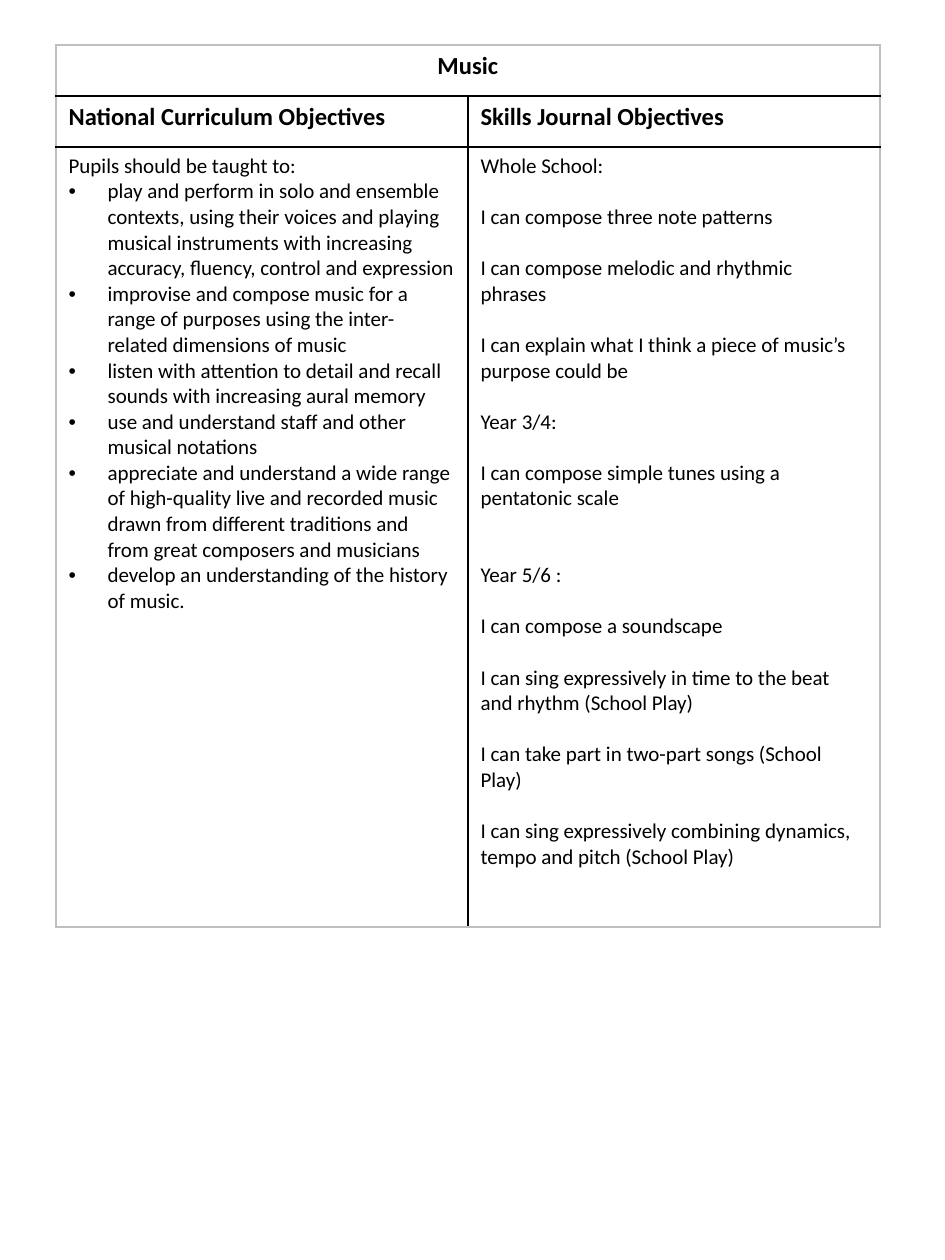
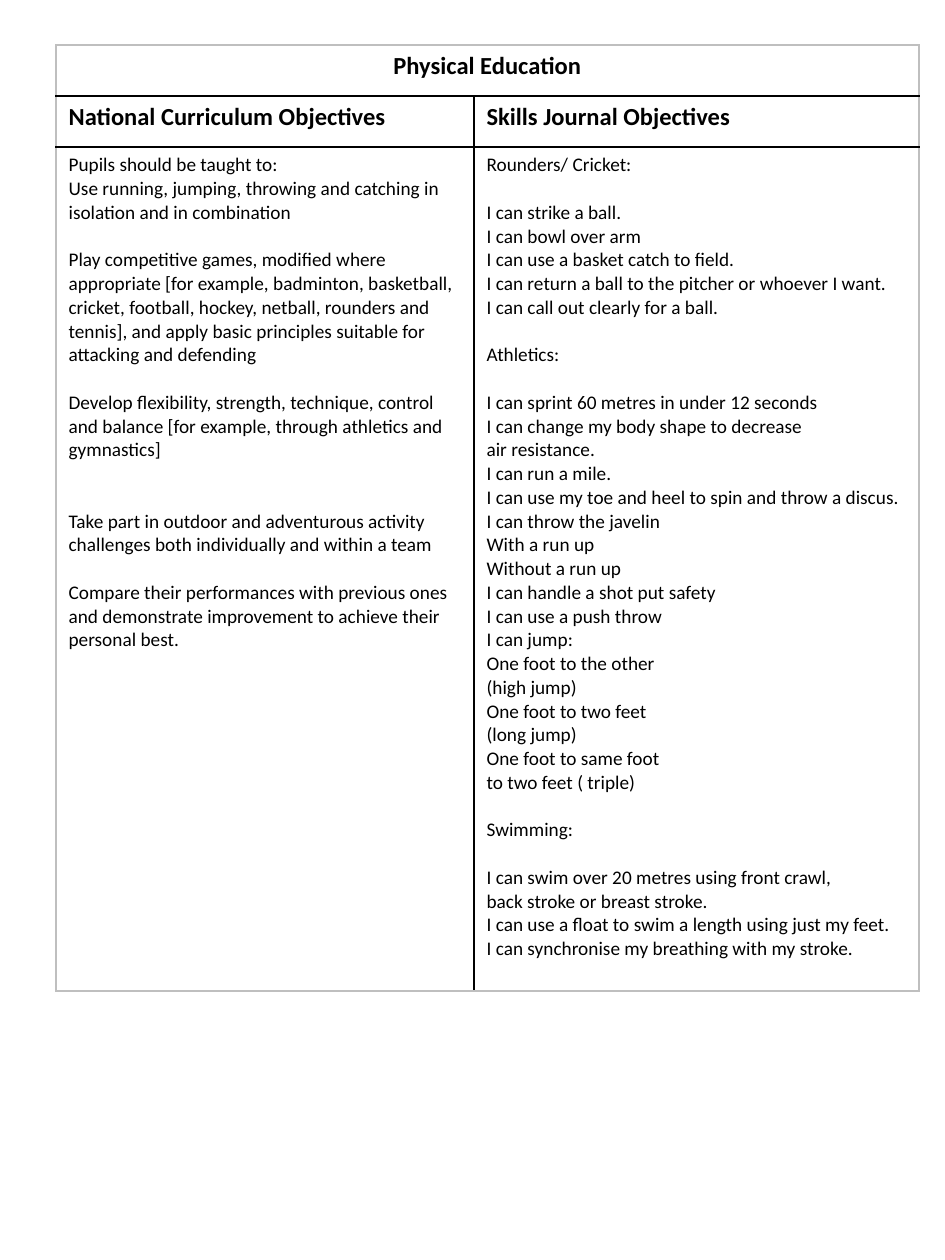
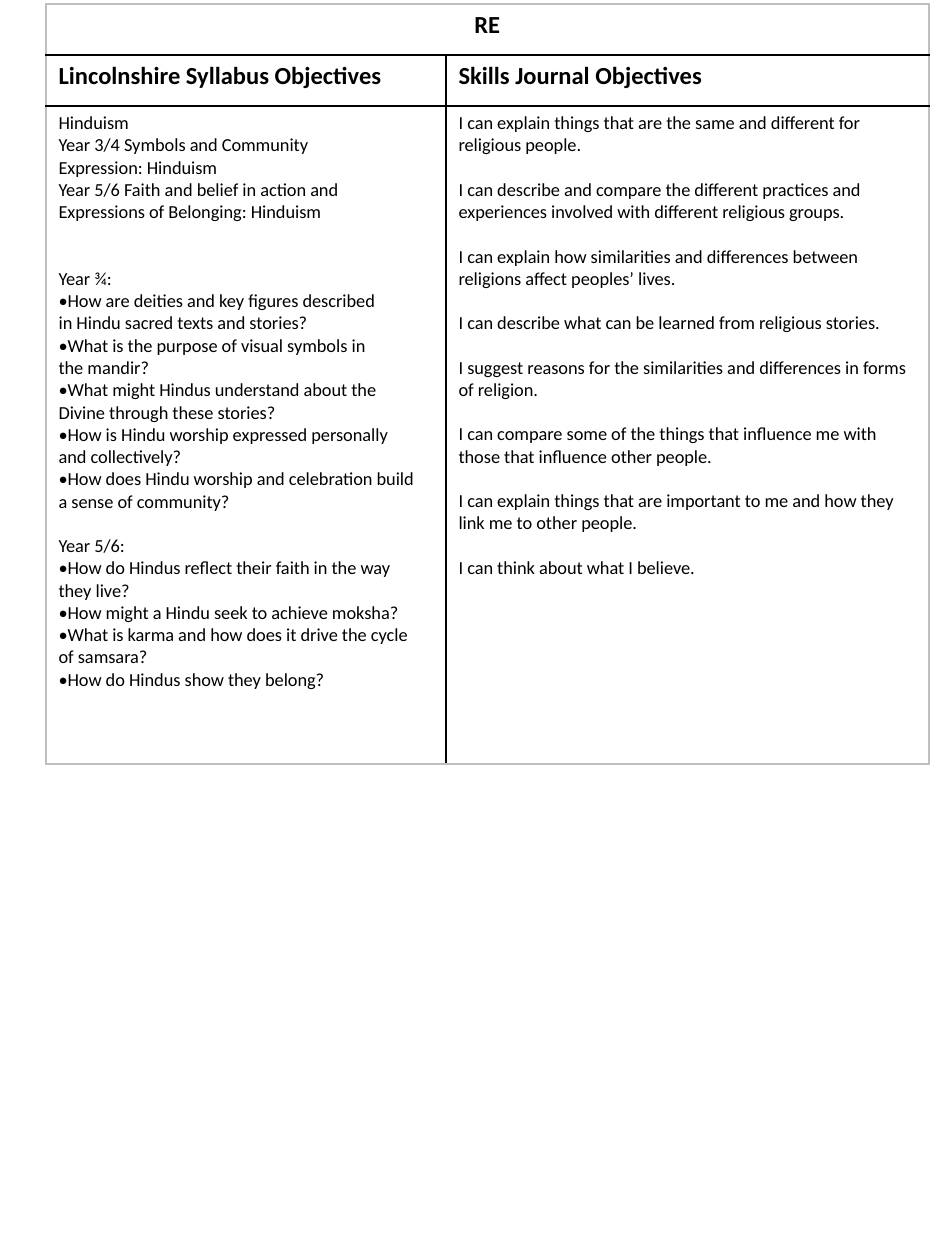
from dataclasses import dataclass
from typing import NamedTuple

from lxml import etree
from pptx import Presentation
from pptx.dml.color import RGBColor
from pptx.enum.text import PP_ALIGN
from pptx.oxml.ns import qn
from pptx.util import Emu, Pt

CENTER, LEFT = PP_ALIGN.CENTER, PP_ALIGN.LEFT

# Shared look
PX = 914400 / 126
PAGE_WIDTH, PAGE_HEIGHT = 945, 1260
HEADING_ROWS = (51, 51)
BULLET_INDENT = 39
RIGHT_MARGIN = 13
FONT = "Calibri"
HEADING_SIZE = 14
BORDER = Pt(1)
COLORS = {"text": "000000", "rule": "000000", "frame": "BFBFBF"}


class Entry(NamedTuple):
    text: str  # "~" stands for a non-breaking space
    gap: int = 0  # free lines above
    bulleted: bool = False


@dataclass(frozen=True)
class Subject:
    title: str
    source: str
    left: int
    top: int
    columns: tuple[int, int]
    body_height: int
    size: float
    free_line: float  # height of a free line in points
    objectives: list[Entry]
    skills: list[Entry]


def px(length: int) -> Emu:
    return Emu(round(length * PX))


def spaced(*texts: str) -> list[Entry]:
    """Entries with one free line between them."""
    return [Entry(text, min(index, 1)) for index, text in enumerate(texts)]


def lines(*texts: str, gap: int = 0) -> list[Entry]:
    """Entries set close together, with a gap above the first."""
    return [Entry(text, 0 if index else gap) for index, text in enumerate(texts)]


def bullets(*texts: str) -> list[Entry]:
    return [Entry(text, bulleted=True) for text in texts]


def add_bullet(paragraph) -> None:
    properties = paragraph._p.get_or_add_pPr()
    properties.set("marL", str(px(BULLET_INDENT)))
    properties.set("indent", str(-px(BULLET_INDENT)))
    bullet_font = etree.Element(qn("a:buFont"), typeface="Arial")
    bullet = etree.Element(qn("a:buChar"), char="•")
    default_font = properties.find(qn("a:defRPr"))
    default_font.addprevious(bullet_font)
    default_font.addprevious(bullet)


def write(cell, entries: list[Entry], size: float, free_line: float = 0,
          bold: bool = False, align=LEFT) -> None:
    frame = cell.text_frame
    for index, entry in enumerate(entries):
        paragraph = frame.add_paragraph() if index else frame.paragraphs[0]
        paragraph.text = entry.text.replace("~", chr(160))
        paragraph.alignment = align
        paragraph.space_before = Pt(round(entry.gap * free_line, 2))
        font = paragraph.font
        font.name, font.size, font.bold = FONT, Pt(size), bold
        font.color.rgb = RGBColor.from_string(COLORS["text"])
        if entry.bulleted:
            add_bullet(paragraph)


def set_borders(cell, row: int, column: int) -> None:
    # The title row spans both columns, so both its ends lie on the frame
    outer_sides = {"lnL": column == 0 or row == 0, "lnR": column == 1 or row == 0,
                   "lnT": row == 0, "lnB": row == len(HEADING_ROWS)}
    properties = cell._tc.get_or_add_tcPr()
    for side, is_outer in outer_sides.items():
        line = etree.SubElement(properties, qn(f"a:{side}"), w=str(BORDER))
        fill = etree.SubElement(line, qn("a:solidFill"))
        color = COLORS["frame" if is_outer else "rule"]
        etree.SubElement(fill, qn("a:srgbClr"), val=color)


def add_subject(prs, subject: Subject) -> None:
    slide = prs.slides.add_slide(prs.slide_layouts[6])
    heights = (*HEADING_ROWS, subject.body_height)
    table = slide.shapes.add_table(
        len(heights), len(subject.columns), px(subject.left), px(subject.top),
        px(sum(subject.columns)), px(sum(heights))).table
    table.first_row = table.horz_banding = False
    for column, width in zip(table.columns, subject.columns):
        column.width = px(width)

    # Grid
    for row, height in enumerate(heights):
        table.rows[row].height = px(height)
        for column in range(len(subject.columns)):
            cell = table.cell(row, column)
            set_borders(cell, row, column)
            cell.fill.background()
            cell.margin_right = px(RIGHT_MARGIN)

    # Headings
    title = table.cell(0, 0)
    title.merge(table.cell(0, 1))
    write(title, [Entry(subject.title)], HEADING_SIZE, bold=True, align=CENTER)
    for column, name in enumerate((subject.source, "Skills Journal")):
        write(table.cell(1, column), [Entry(f"{name} Objectives")],
              HEADING_SIZE, bold=True)

    # Objectives
    for column, entries in enumerate((subject.objectives, subject.skills)):
        write(table.cell(2, column), entries, subject.size, subject.free_line)


MUSIC = Subject(
    "Music", "National Curriculum", 56, 45, (412, 412), 780, 12, 14.63,
    objectives=lines("Pupils should be taught to:") + bullets(
        "play and perform in solo and ensemble contexts, using their voices and "
        "playing musical instruments with increasing accuracy, fluency, control "
        "and expression",
        "improvise and compose music for a range of purposes using the "
        "inter-related dimensions of music",
        "listen with attention to detail and recall sounds with increasing aural "
        "memory",
        "use and understand staff and other musical notations",
        "appreciate and understand a wide range of high-quality live and recorded "
        "music drawn from different traditions and from great composers and "
        "musicians",
        "develop an understanding of the history of music."),
    skills=spaced(
        "Whole School:",
        "I can compose three note patterns",
        "I can compose melodic and rhythmic phrases~",
        "I can explain what I think a piece of music’s purpose could be",
        "Year 3/4:",
        "I can compose simple tunes using a pentatonic scale",
    ) + [Entry("Year 5/6 :", 2), Entry("I can compose a soundscape", 1)] + [
        Entry(f"{skill}~(School Play)", 1) for skill in (
            "I can sing expressively in time to the beat and rhythm",
            "I can take part in two-part songs",
            "I can sing expressively combining dynamics, tempo and pitch")],
)

PHYSICAL_EDUCATION = Subject(
    "Physical Education", "National Curriculum", 56, 45, (418, 445), 844, 11, 13.55,
    objectives=lines(
        "Pupils should be taught to:",
        "Use running, jumping, throwing and catching in isolation and in "
        "combination",
    ) + [
        Entry("Play competitive games, modified where appropriate [for example, "
              "badminton, basketball, cricket, football, hockey, netball, rounders "
              "and tennis], and apply basic principles suitable for attacking and "
              "defending", 1),
        Entry("Develop flexibility, strength, technique, control and balance [for "
              "example, through athletics and gymnastics]", 1),
        Entry("Take part in outdoor and adventurous activity challenges both "
              "individually and within a team", 2),
        Entry("Compare their performances with previous ones and demonstrate "
              "improvement to achieve their personal best.", 1),
    ],
    skills=lines("Rounders/ Cricket:") + lines(
        "I can strike a ball.",
        "I can bowl over arm",
        "I can use a basket catch to field.",
        "I can return a ball to the pitcher or whoever I want.",
        "I can call out clearly for a ball.", gap=1,
    ) + lines("Athletics:", gap=1) + lines(
        "I can sprint 60 metres in under 12 seconds",
        "I can change my body shape to decrease air~resistance.",
        "I can run a mile.",
        "I can use my toe and heel to spin and throw a discus.",
        "I can throw the javelin",
        "With a run up",
        "Without a run up",
        "I can handle a shot put safety",
        "I can use a push throw",
        "I can jump:",
        "One foot to the other",
        "(high jump)",
        "One foot to two feet",
        "(long jump)",
        "One foot to same foot",
        "to two feet ( triple)", gap=1,
    ) + lines("Swimming:", gap=1) + lines(
        "I can swim over 20 metres using front crawl, back~stroke or~breast stroke.",
        "I can use a float to swim a length using just my feet.",
        "I can synchronise my breathing with my stroke.", gap=1),
)

RELIGIOUS_EDUCATION = Subject(
    "RE", "Lincolnshire Syllabus", 46, 4, (400, 483), 658, 10.5, 12.65,
    objectives=lines(
        "Hinduism",
        "Year 3/4 Symbols and Community Expression:~Hinduism",
        "Year 5/6 Faith and belief in action and Expressions~of Belonging: Hinduism",
    ) + lines(
        "Year ¾:",
        "•How are deities and key figures described in~Hindu sacred texts and "
        "stories?",
        "•What is the purpose of visual symbols in the~mandir?",
        "•What might Hindus understand about the Divine~through these stories?",
        "•How is Hindu worship expressed personally and~collectively?",
        "•How does Hindu worship and celebration build a~sense of community?", gap=2,
    ) + lines(
        "Year 5/6:",
        "•How do Hindus reflect their faith in the way they~live?",
        "•How might a Hindu seek to achieve moksha?",
        "•What is karma and how does it drive the cycle of~samsara?",
        "•How do Hindus show they belong?", gap=1),
    skills=spaced(
        "I can explain things that are the same and different for religious people.",
        "I can describe and compare the different practices and experiences "
        "involved with different religious groups.",
        "I can explain how similarities and differences between religions affect "
        "peoples’ lives.",
        "I can describe what can be learned from religious stories.",
        "I suggest reasons for the similarities and differences in forms of "
        "religion.",
        "I can compare some of the things that influence me with those that "
        "influence other people.",
        "I can explain things that are important to me and how they link me to "
        "other people.",
        "I can think about what I believe."),
)


def main() -> None:
    prs = Presentation()
    prs.slide_width, prs.slide_height = px(PAGE_WIDTH), px(PAGE_HEIGHT)
    for subject in (MUSIC, PHYSICAL_EDUCATION, RELIGIOUS_EDUCATION):
        add_subject(prs, subject)
    prs.save("out.pptx")


if __name__ == "__main__":
    main()
